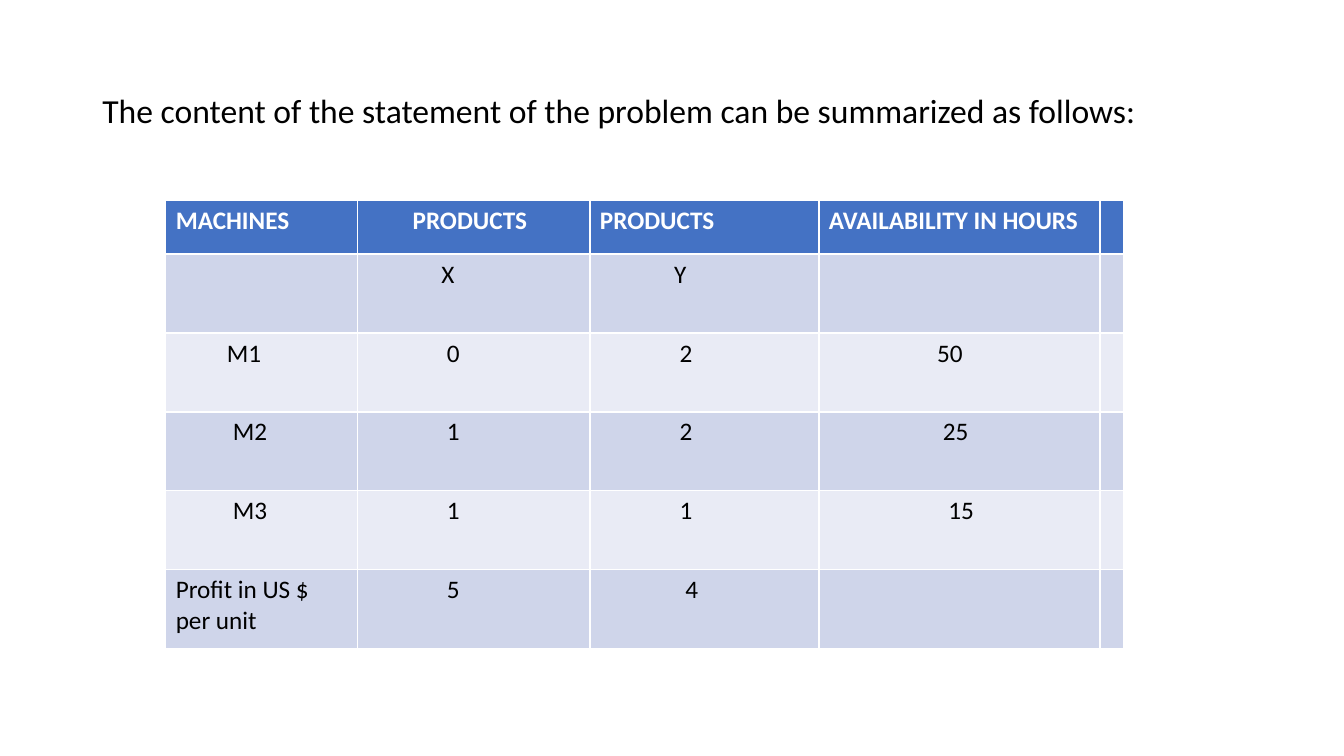
from pptx import Presentation
from pptx.dml.color import RGBColor
from pptx.enum.text import MSO_ANCHOR
from pptx.util import Cm, Pt

TITLE = "The content of the statement of the problem can be summarized as follows:"
# Each cell holds its text and its indent in cm.
EMPTY = ("", 0)
ROWS = [
    [("MACHINES", 0), ("PRODUCTS", 1.15), ("PRODUCTS", 0), ("AVAILABILITY IN HOURS", 0), EMPTY],
    [EMPTY, ("X", 1.87), ("Y", 1.87), EMPTY, EMPTY],
    [("M1", 1.29), ("0", 2.01), ("2", 2.01), ("50", 2.73), EMPTY],
    [("M2", 1.44), ("1", 2.01), ("2", 2.01), ("25", 2.87), EMPTY],
    [("M3", 1.44), ("1", 2.01), ("1", 2.01), ("15", 3.01), EMPTY],
    [("Profit in US $ per unit", 0), ("5", 2.01), ("4", 2.15), EMPTY, EMPTY],
]
COLUMN_WIDTHS = [4.82, 5.87, 5.77, 7.08, 0.6]
HEADER_HEIGHT, BODY_HEIGHT = 1.36, 1.99
CELL_MARGIN = 0.25

FONT = "Calibri"
BLACK = RGBColor(0x00, 0x00, 0x00)
WHITE = RGBColor(0xFF, 0xFF, 0xFF)
HEADER_BLUE = RGBColor(0x44, 0x72, 0xC4)
BANDS = [RGBColor(0xE9, 0xEB, 0xF5), RGBColor(0xCF, 0xD5, 0xEA)]
MIDDLE = MSO_ANCHOR.MIDDLE


def add_span(para, text, size, color, bold=False):
    span = para.add_run()
    span.text = text
    span.font.name = FONT
    span.font.size = Pt(size)
    span.font.bold = bold
    span.font.color.rgb = color


def add_title(page):
    box = page.shapes.add_textbox(Cm(2.33), Cm(1.01), Cm(29.21), Cm(3.68))
    frame = box.text_frame
    frame.word_wrap = True
    frame.vertical_anchor = MIDDLE
    para = frame.paragraphs[0]
    para.line_spacing = 0.9
    add_span(para, TITLE, 24, BLACK)


def add_machine_table(page):
    heights = [HEADER_HEIGHT] + [BODY_HEIGHT] * (len(ROWS) - 1)
    table = page.shapes.add_table(
        len(ROWS), len(COLUMN_WIDTHS), Cm(4.18), Cm(5.04),
        Cm(sum(COLUMN_WIDTHS)), Cm(sum(heights))).table
    for column, width in zip(table.columns, COLUMN_WIDTHS):
        column.width = Cm(width)
    for index, (row, height, contents) in enumerate(zip(table.rows, heights, ROWS)):
        row.height = Cm(height)
        header = index == 0
        for cell, (text, indent) in zip(row.cells, contents):
            cell.fill.solid()
            cell.fill.fore_color.rgb = HEADER_BLUE if header else BANDS[index % 2]
            cell.margin_left = Cm(CELL_MARGIN + indent)
            if text:
                add_span(cell.text_frame.paragraphs[0], text, 18,
                         WHITE if header else BLACK, header)


def main():
    deck = Presentation()
    deck.slide_width, deck.slide_height = Cm(33.87), Cm(19.05)
    page = deck.slides.add_slide(deck.slide_layouts[6])
    add_title(page)
    add_machine_table(page)
    deck.save("out.pptx")


if __name__ == "__main__":
    main()
